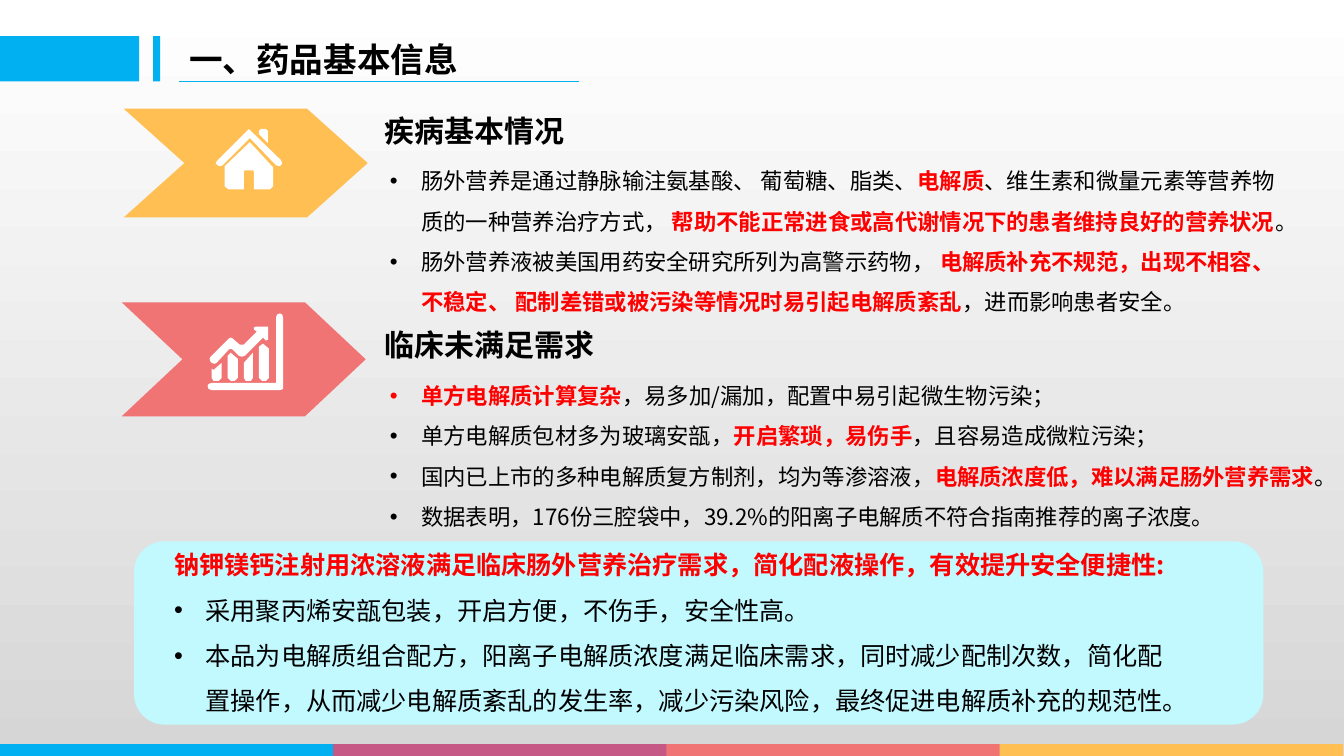
from dataclasses import dataclass

from lxml import etree
from pptx import Presentation
from pptx.dml.color import RGBColor
from pptx.enum.shapes import MSO_CONNECTOR, MSO_SHAPE
from pptx.enum.text import MSO_ANCHOR, MSO_AUTO_SIZE, PP_ALIGN
from pptx.oxml.ns import qn
from pptx.util import Cm, Pt

RECTANGLE = MSO_SHAPE.RECTANGLE
ROUNDED = MSO_SHAPE.ROUNDED_RECTANGLE
CHEVRON = MSO_SHAPE.CHEVRON
STRAIGHT = MSO_CONNECTOR.STRAIGHT
TOP, MIDDLE = MSO_ANCHOR.TOP, MSO_ANCHOR.MIDDLE
GROW, NO_FIT = MSO_AUTO_SIZE.SHAPE_TO_FIT_TEXT, MSO_AUTO_SIZE.NONE
LEFT = PP_ALIGN.LEFT
COMPARISON_LAYOUT = 4


@dataclass(frozen=True)
class Theme:
    font: str = "Noto Sans CJK SC"
    ink: str = "000000"
    accent: str = "FF0000"
    white: str = "FFFFFF"
    gray: str = "D6D6D6"
    blue: str = "00B0F0"
    purple: str = "C65885"
    coral: str = "F17475"
    amber: str = "FFBF53"
    pale: str = "C1F9FF"
    title_size: float = 24
    heading_size: float = 21.4
    list_size: float = 16
    summary_size: float = 18


THEME = Theme()
ICON_UNIT = Cm(0.0254)
LIST_INDENT = Cm(0.79)

HOUSE = [
    [(266, 130), (264, 128), (259, 128), (257, 130), (257, 133), (266, 142)],
    [(279, 159), (249, 130), (247, 128), (245, 130), (216, 159), (214, 162), (216, 164),
     (218, 165), (221, 164), (248, 137), (274, 164), (277, 165), (279, 164), (280, 162)],
    [(223, 165), (223, 185), (227, 188), (242, 188), (242, 170), (243, 169), (251, 169),
     (252, 170), (252, 188), (268, 188), (271, 185), (271, 166), (248, 141)],
]
GROWTH_CHART = [
    [(210, 366), (212, 367), (220, 360), (220, 375), (217, 378), (212, 378), (210, 375)],
    [(226, 353), (229, 350), (236, 356), (236, 375), (233, 378), (229, 378), (226, 375)],
    [(242, 360), (251, 350), (251, 375), (249, 378), (244, 378), (242, 375)],
    [(257, 344), (261, 341), (267, 346), (267, 375), (264, 378), (260, 378), (257, 375)],
    [(227, 347), (229, 346), (231, 347), (237, 353), (240, 354), (243, 353), (261, 335),
     (264, 338), (266, 337), (266, 324), (254, 324), (252, 325), (252, 327), (255, 329),
     (242, 342), (238, 342), (231, 336), (229, 335), (227, 336), (209, 354), (208, 356),
     (209, 359), (210, 360), (213, 361), (215, 360)],
    [(278, 311), (275, 312), (274, 315), (274, 380), (210, 380), (207, 381), (206, 383),
     (207, 386), (210, 387), (278, 387), (281, 386), (281, 315), (280, 312)],
]

DISEASE = [
    "肠外营养是通过静脉输注氨基酸、 葡萄糖、脂类、*电解质*、维生素和微量元素等营养物质的一种营养治疗方式，"
    "* 帮助不能正常进食或高代谢情况下的患者维持良好的营养状况*。",
    "肠外营养液被美国用药安全研究所列为高警示药物， *电解质补充不规范，出现不相容、 不稳定、 "
    "配制差错或被污染等情况时易引起电解质紊乱*，进而影响患者安全。",
]
NEEDS = [
    "*单方电解质计算复杂*，易多加/漏加，配置中易引起微生物污染；",
    "单方电解质包材多为玻璃安瓿，*开启繁琐，易伤手*，且容易造成微粒污染；",
    "国内已上市的多种电解质复方制剂，均为等渗溶液，*电解质浓度低，难以满足肠外营养需求*。",
    "数据表明，176份三腔袋中，39.2%的阳离子电解质不符合指南推荐的离子浓度。",
]
SUMMARY = [
    "*钠钾镁钙注射用浓溶液满足临床肠外营养治疗需求，简化配液操作，有效提升安全便捷性:*",
    "采用聚丙烯安瓿包装，开启方便，不伤手，安全性高。",
    "本品为电解质组合配方，阳离子电解质浓度满足临床需求，同时减少配制次数，简化配置操作，"
    "从而减少电解质紊乱的发生率，减少污染风险，最终促进电解质补充的规范性。",
]


def paint(shape, color):
    shape.shadow.inherit = False
    shape.fill.solid()
    shape.fill.fore_color.rgb = RGBColor.from_string(color)
    shape.line.fill.background()


def add_block(page, kind, left, top, width, height, color):
    block = page.shapes.add_shape(kind, Cm(left), Cm(top), Cm(width), Cm(height))
    paint(block, color)
    return block


def add_arrow(page, left, top, height, color):
    arrow = add_block(page, CHEVRON, left, top, 6.15, height, color)
    arrow.adjustments[0] = 1.53 / height


def add_icon(page, outlines):
    builder = page.shapes.build_freeform(*outlines[0][0], scale=ICON_UNIT)
    builder.add_line_segments(outlines[0][1:], close=True)
    for outline in outlines[1:]:
        builder.move_to(*outline[0])
        builder.add_line_segments(outline[1:], close=True)
    paint(builder.convert_to_shape(), THEME.white)


def add_rule(page, left, right, top, color):
    rule = page.shapes.add_connector(STRAIGHT, Cm(left), Cm(top), Cm(right), Cm(top))
    rule.line.color.rgb = RGBColor.from_string(color)
    rule.line.width = Pt(0.75)
    etree.SubElement(rule._element.spPr, qn("a:effectLst"))


def place(box, left, top, width, height, inset=(0.25, 0.13), anchor=TOP, fit=GROW):
    box.left, box.top, box.width, box.height = Cm(left), Cm(top), Cm(width), Cm(height)
    frame = box.text_frame
    frame.word_wrap = True
    frame.auto_size = fit
    frame.vertical_anchor = anchor
    frame.margin_left = frame.margin_right = Cm(inset[0])
    frame.margin_top = frame.margin_bottom = Cm(inset[1])


def style(span, size, color, bold):
    span.font.name = THEME.font
    span.font.size = Pt(size)
    span.font.bold = bold
    span.font.color.rgb = RGBColor.from_string(color)
    east_asian = etree.SubElement(span._r.get_or_add_rPr(), qn("a:ea"))
    east_asian.set("typeface", THEME.font)


def write_heading(box, text, size):
    box.text_frame.text = text
    para = box.text_frame.paragraphs[0]
    para.alignment = LEFT
    para.space_before = Pt(0)
    style(para.runs[0], size, THEME.ink, True)


def add_bullet(para):
    properties = para._p.get_or_add_pPr()
    properties.set("marL", str(LIST_INDENT))
    properties.set("indent", str(-LIST_INDENT))
    etree.SubElement(properties, qn("a:buFont")).set("typeface", "Arial")
    etree.SubElement(properties, qn("a:buChar")).set("char", "•")


def write_list(box, items, size, plain_lines=0):
    frame = box.text_frame
    for number, item in enumerate(items):
        para = frame.add_paragraph() if number else frame.paragraphs[0]
        para.line_spacing = 1.5
        para.space_before = Pt(0)
        if number >= plain_lines:
            add_bullet(para)
        for position, part in enumerate(item.split("*")):
            if part:
                span = para.add_run()
                span.text = part
                strong = position % 2 == 1
                style(span, size, THEME.accent if strong else THEME.ink, strong)


def set_background(page):
    fill = page.background.fill
    fill.gradient()
    fill.gradient_angle = 270
    for stop, color in zip(fill.gradient_stops, (THEME.white, THEME.gray)):
        stop.color.rgb = RGBColor.from_string(color)


def main():
    deck = Presentation()
    deck.slide_width, deck.slide_height = Cm(33.88), Cm(19.05)
    page = deck.slides.add_slide(deck.slide_layouts[COMPARISON_LAYOUT])
    set_background(page)

    add_block(page, RECTANGLE, 0, 0.91, 3.51, 1.14, THEME.blue)
    add_block(page, RECTANGLE, 3.86, 0.91, 0.18, 1.14, THEME.blue)
    add_rule(page, 4.52, 14.6, 2.06, THEME.blue)
    for number, color in enumerate((THEME.blue, THEME.purple, THEME.coral, THEME.amber)):
        add_block(page, RECTANGLE, 8.4 * number, 18.75, 8.66, 0.3, color)

    title = page.shapes.title
    place(title, 4.52, 0.91, 10.08, 1.14, anchor=MIDDLE, fit=NO_FIT)
    write_heading(title, "一、药品基本信息", THEME.title_size)

    boxes = page.placeholders
    sections = [
        (boxes[1], boxes[2], "疾病基本情况", DISEASE, 2.74, 3.73, 23.42),
        (boxes[3], boxes[4], "临床未满足需求", NEEDS, 8.13, 9.14, 24.36),
    ]
    for heading, body, text, items, heading_top, body_top, body_width in sections:
        place(heading, 9.5, heading_top, 9.86, 1.12, inset=(0.2, 0.1))
        write_heading(heading, text, THEME.heading_size)
        place(body, 9.5, body_top, body_width, 4.42, inset=(0.33, 0.15))
        write_list(body, items, THEME.list_size)

    add_arrow(page, 3.12, 2.74, 2.74, THEME.amber)
    add_icon(page, HOUSE)
    add_arrow(page, 3.07, 7.62, 2.87, THEME.coral)
    add_icon(page, GROWTH_CHART)

    add_block(page, ROUNDED, 3.38, 13.64, 28.47, 4.62, THEME.pale)
    summary = page.shapes.add_textbox(0, 0, 0, 0)
    place(summary, 4.14, 13.34, 25.98, 4.88)
    write_list(summary, SUMMARY, THEME.summary_size, plain_lines=1)

    deck.save("out.pptx")


if __name__ == "__main__":
    main()
